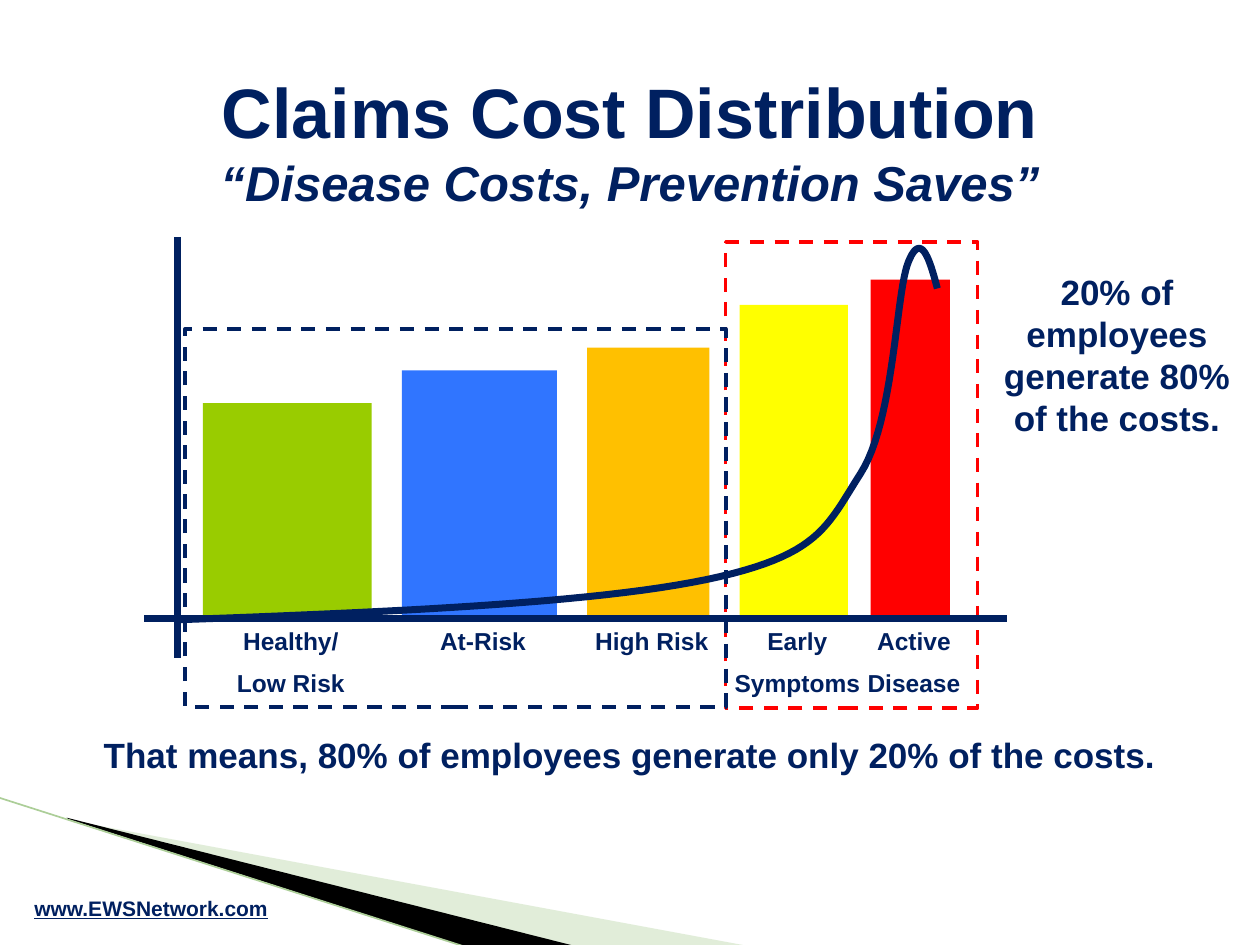
from typing import NamedTuple, Optional

from lxml import etree
from pptx import Presentation
from pptx.dml.color import RGBColor
from pptx.enum import dml, shapes, text
from pptx.oxml import ns
from pptx.util import Inches, Pt

NAVY = "002060"
RED = "FF0000"
BASELINE = 4.92


class Point(NamedTuple):
    x: float
    y: float


class Box(NamedTuple):
    left: float
    top: float
    width: float
    height: float

    def lengths(self):
        return [Inches(value) for value in self]


class Bar(NamedTuple):
    left: float
    top: float
    width: float
    color: str
    label: str
    second_line: str = ""


class Wedge(NamedTuple):
    points: list[Point]
    color: str
    opacity: Optional[int] = None


class Line(NamedTuple):
    start: Point
    end: Point
    color: str
    width: float


WEDGES = [
    Wedge([Point(0.55, 6.51), Point(5.95, 7.51), Point(4.56, 7.51), Point(0.55, 6.5)], "B4D3A1", 40),
    Wedge([Point(0.53, 6.49), Point(4.57, 7.51), Point(3.72, 7.52), Point(0.54, 6.5)], "000000"),
]
EDGE = Line(Point(-0.01, 6.33), Point(3.71, 7.52), "ACCE98", 0.95)
BARS = [
    Bar(1.61, 3.2, 1.34, "99CC00", "Healthy/", "Low Risk"),
    Bar(3.19, 2.94, 1.23, "3075FF", "At-Risk"),
    Bar(4.66, 2.76, 0.97, "FFC000", "High Risk"),
    Bar(5.87, 2.42, 0.86, "FFFF00", "Early", "Symptoms"),
    Bar(6.91, 2.22, 0.63, RED, "Active", "Disease"),
]
VERTICAL_AXIS = Line(Point(1.41, 1.88), Point(1.41, 5.22), NAVY, 4)
HORIZONTAL_AXIS = Line(Point(7.99, 4.91), Point(1.14, 4.91), NAVY, 4)
# Bezier knots and handles: start, then two handles and an end per segment
COST_CURVE = [
    Point(1.41, 4.92),
    Point(3.06, 4.86), Point(4.7, 4.79), Point(5.61, 4.6),
    Point(6.51, 4.41), Point(6.56, 4.18), Point(6.83, 3.76),
    Point(7.1, 3.34), Point(7.11, 2.32), Point(7.21, 2.08),
    Point(7.31, 1.83), Point(7.38, 2.06), Point(7.44, 2.29),
]


def rgb(color: str) -> RGBColor:
    return RGBColor.from_string(color)


def set_fill(shape, color: str) -> None:
    shape.fill.solid()
    shape.fill.fore_color.rgb = rgb(color)


def set_line(shape, color: str, width: float) -> None:
    shape.line.color.rgb = rgb(color)
    shape.line.width = Pt(width)


def add_text(paragraph, content: str, *, size: float, italic: bool = False, underline: bool = False) -> None:
    run = paragraph.add_run()
    run.text = content
    font = run.font
    font.name, font.size, font.bold = "Arial", Pt(size), True
    font.color.rgb = rgb(NAVY)
    if italic:
        font.italic = True
    if underline:
        font.underline = True


def add_text_box(slide, box: Box, anchor=text.MSO_ANCHOR.MIDDLE, align=text.PP_ALIGN.CENTER):
    frame = slide.shapes.add_textbox(*box.lengths()).text_frame
    frame.word_wrap = True
    frame.vertical_anchor = anchor
    frame.paragraphs[0].alignment = align
    return frame


def add_rectangle(slide, box: Box):
    shape = slide.shapes.add_shape(shapes.MSO_SHAPE.RECTANGLE, *box.lengths())
    shape.shadow.inherit = False
    return shape


def add_dashed_frame(slide, box: Box, color: str) -> None:
    shape = add_rectangle(slide, box)
    shape.fill.background()
    set_line(shape, color, 2)
    shape.line.dash_style = dml.MSO_LINE.DASH


def add_line(slide, line: Line) -> None:
    ends = [Inches(value) for value in (*line.start, *line.end)]
    connector = slide.shapes.add_connector(shapes.MSO_CONNECTOR.STRAIGHT, *ends)
    set_line(connector, line.color, line.width)
    etree.SubElement(connector._element.spPr, ns.qn("a:effectLst"))


def add_outline(slide, points: list[Point], closed: bool):
    vertices = [(Inches(point.x), Inches(point.y)) for point in points]
    builder = slide.shapes.build_freeform(*vertices[0])
    builder.add_line_segments(vertices[1:], close=closed)
    shape = builder.convert_to_shape()
    shape.shadow.inherit = False
    return shape


def add_wedge(slide, wedge: Wedge) -> None:
    shape = add_outline(slide, wedge.points, closed=True)
    set_fill(shape, wedge.color)
    shape.line.fill.background()
    if wedge.opacity is not None:
        color = shape._element.spPr.find(".//" + ns.qn("a:srgbClr"))
        etree.SubElement(color, ns.qn("a:alpha"), val=str(wedge.opacity * 1000))


def bezier_points(knots: list[Point], steps: int = 24) -> list[Point]:
    points = [knots[0]]
    for first in range(0, len(knots) - 1, 3):
        segment = knots[first:first + 4]
        for step in range(1, steps + 1):
            t = step / steps
            weights = ((1 - t) ** 3, 3 * t * (1 - t) ** 2, 3 * t * t * (1 - t), t ** 3)
            points.append(Point(
                sum(weight * knot.x for weight, knot in zip(weights, segment)),
                sum(weight * knot.y for weight, knot in zip(weights, segment)),
            ))
    return points


def add_bar_labels(slide, bars: list[Bar], box: Box) -> None:
    """Two lines of labels, centred by tab stops under the bars."""
    frame = add_text_box(slide, box, text.MSO_ANCHOR.TOP, text.PP_ALIGN.LEFT)
    lines = [[bar.label for bar in bars], [bar.second_line for bar in bars]]
    for number, labels in enumerate(lines):
        paragraph = frame.add_paragraph() if number else frame.paragraphs[0]
        if number:
            paragraph.space_before = Pt(7)
        tabs = etree.SubElement(paragraph._p.get_or_add_pPr(), ns.qn("a:tabLst"))
        for bar in bars:
            center = bar.left + bar.width / 2 + 0.03 - box.left - 0.1
            etree.SubElement(tabs, ns.qn("a:tab"), pos=str(Inches(center)), algn="ctr")
        add_text(paragraph, "".join("\t" + label for label in labels), size=14)


def main() -> None:
    presentation = Presentation()
    presentation.slide_width, presentation.slide_height = Inches(10), Inches(7.5)
    slide = presentation.slides.add_slide(presentation.slide_layouts[6])

    # Corner decoration
    for wedge in WEDGES:
        add_wedge(slide, wedge)
    add_line(slide, EDGE)

    # Bars and their labels
    add_bar_labels(slide, BARS, Box(1.25, BASELINE, 8.42, 0.69))
    for bar in BARS:
        shape = add_rectangle(slide, Box(bar.left, bar.top, bar.width, BASELINE - bar.top))
        set_fill(shape, bar.color)
        shape.line.fill.background()

    # Cost curve, axes and group frames
    curve = add_outline(slide, bezier_points(COST_CURVE), closed=False)
    curve.fill.background()
    set_line(curve, NAVY, 4)
    add_line(slide, VERTICAL_AXIS)
    add_dashed_frame(slide, Box(5.76, 1.92, 2, 3.7), RED)
    add_line(slide, HORIZONTAL_AXIS)
    add_dashed_frame(slide, Box(1.47, 2.61, 4.29, 3), NAVY)

    # Title and subtitle
    title = add_text_box(slide, Box(0, 0.36, 10, 1.5)).paragraphs[0]
    add_text(title, "Claims Cost Distribution", size=40)
    title.add_line_break()
    add_text(title, "“Disease Costs, Prevention Saves”", size=28, italic=True)

    # Statements and web address
    conclusion = add_text_box(slide, Box(0, 5.61, 10, 0.75))
    add_text(conclusion.paragraphs[0], "That means, 80% of employees generate only 20% of the costs.", size=20)
    callout = add_text_box(slide, Box(7.74, 1.92, 2.25, 1.78))
    add_text(callout.paragraphs[0], "20% of employees generate 80% of the costs.", size=20)
    address = add_text_box(slide, Box(0, 7.06, 2.4, 0.3), text.MSO_ANCHOR.TOP)
    add_text(address.paragraphs[0], "www.EWSNetwork.com", size=12, underline=True)

    presentation.save("out.pptx")


if __name__ == "__main__":
    main()
